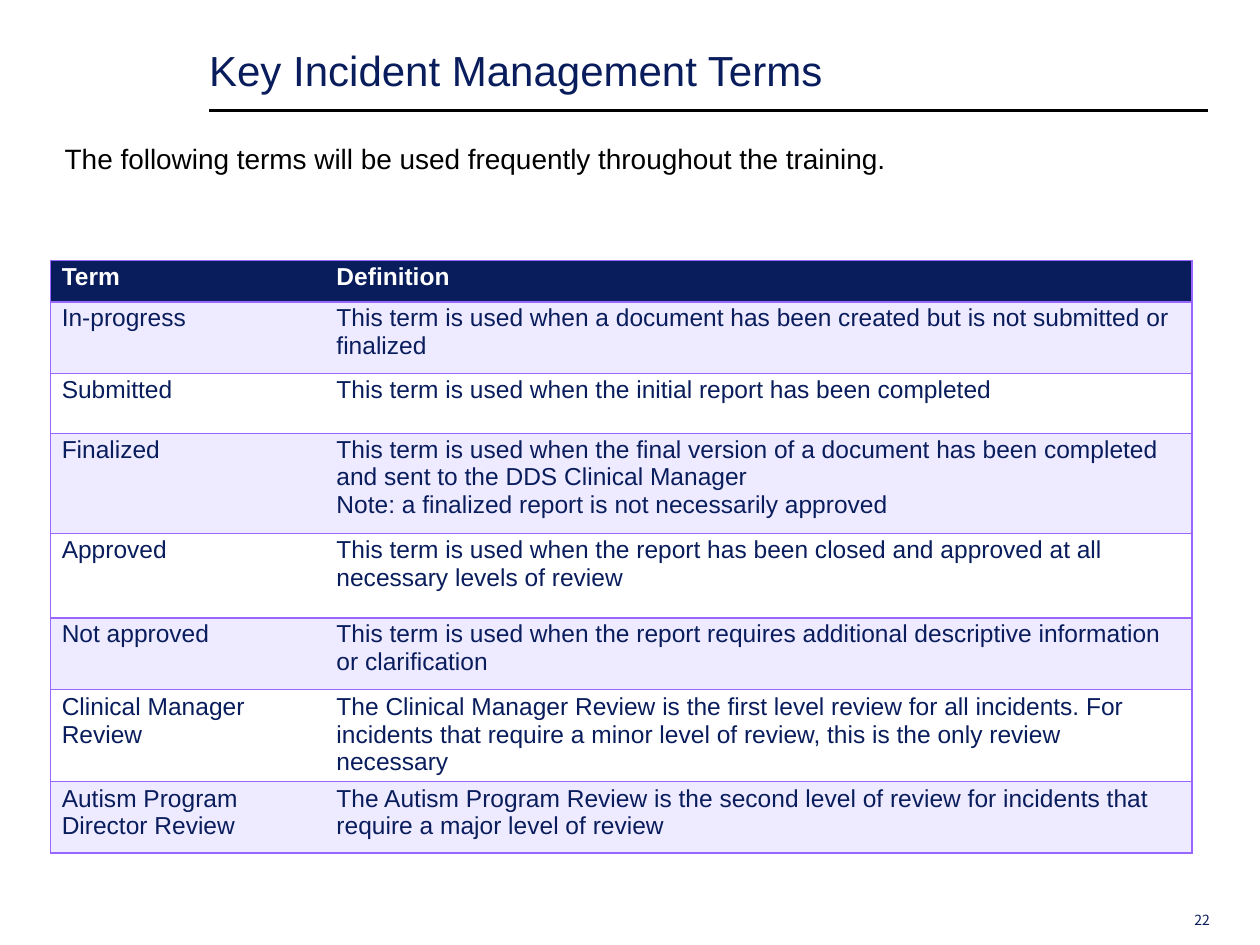
import pptx
import pptx.dml.color
import pptx.enum.shapes
import pptx.enum.text
import pptx.oxml.ns
import pptx.util
from lxml import etree

Pt = pptx.util.Pt

COLORS = {
    "navy": "091D5D",
    "lavender": "EEEAFF",
    "purple": "9966FF",
    "white": "FFFFFF",
    "black": "000000",
}

# Row height, top margin, right margin of the definition, term, definition
TERMS = [
    (23.5, 1.5, 0, "Term", "Definition"),
    (41, 1.5, 0, "In-progress",
     "This term is used when a document has been created but is not submitted or\nfinalized"),
    (34.2, 1.5, 0, "Submitted",
     "This term is used when the initial report has been completed"),
    (57.3, 1.5, 0, "Finalized",
     "This term is used when the final version of a document has been completed\n"
     "and sent to the DDS Clinical Manager\n"
     "Note: a finalized report is not necessarily approved"),
    (48.2, 1.5, 0, "Approved",
     "This term is used when the report has been closed and approved at "
     "all necessary levels of review"),
    (41, 1.5, 0, "Not approved",
     "This term is used when the report requires additional descriptive information\n"
     "or clarification"),
    (52.4, 2, 24, "Clinical Manager Review",
     "The Clinical Manager Review is the first level review for all incidents. "
     "For incidents that require a minor level of review, this is the only review necessary"),
    (40.8, 2, 0, "Autism Program\nDirector Review",
     "The Autism Program Review is the second level of review for incidents that\n"
     "require a major level of review"),
]


def rgb(name):
    return pptx.dml.color.RGBColor.from_string(COLORS[name])


class SlideBuilder:
    font = "Arial"

    def __init__(self, slide):
        self.slide = slide

    def set_text(self, frame, text, size, color, bold=False, font=None):
        frame.text = text
        frame.word_wrap = True
        for paragraph in frame.paragraphs:
            paragraph.alignment = pptx.enum.text.PP_ALIGN.LEFT
            for run in paragraph.runs:
                run.font.name = font or self.font
                run.font.size = Pt(size)
                run.font.bold = bold
                run.font.color.rgb = rgb(color)

    def fill_box(self, shape, text, size, color, font=None):
        frame = shape.text_frame
        frame.margin_left = frame.margin_right = 0
        frame.margin_top = frame.margin_bottom = 0
        frame.vertical_anchor = pptx.enum.text.MSO_ANCHOR.TOP
        frame.auto_size = pptx.enum.text.MSO_AUTO_SIZE.NONE
        self.set_text(frame, text, size, color, font=font)

    def title(self, text, left, top, width, height):
        title = self.slide.shapes.title
        title.left, title.top = Pt(left), Pt(top)
        title.width, title.height = Pt(width), Pt(height)
        self.fill_box(title, text, 24, "navy")

    def text(self, text, left, top, width, height, size, color, font=None):
        box = self.slide.shapes.add_textbox(Pt(left), Pt(top), Pt(width), Pt(height))
        self.fill_box(box, text, size, color, font)

    def rule(self, left, right, y):
        rule = self.slide.shapes.add_connector(
            pptx.enum.shapes.MSO_CONNECTOR.STRAIGHT, Pt(left), Pt(y), Pt(right), Pt(y))
        rule.line.color.rgb = rgb("black")
        rule.line.width = Pt(2)
        properties = rule._element.spPr
        etree.SubElement(properties, pptx.oxml.ns.qn("a:effectLst"))

    def borders(self, cell, hidden_side):
        qn = pptx.oxml.ns.qn
        properties = cell._tc.get_or_add_tcPr()
        for side in "LRTB":
            line = etree.SubElement(properties, qn(f"a:ln{side}"), w=str(Pt(1)))
            if side == hidden_side:
                etree.SubElement(line, qn("a:noFill"))
            else:
                fill = etree.SubElement(line, qn("a:solidFill"))
                etree.SubElement(fill, qn("a:srgbClr"), val=COLORS["purple"])

    def table(self, rows, left, top, column_widths, indents):
        heights = [row[0] for row in rows]
        table = self.slide.shapes.add_table(
            len(rows), len(column_widths), Pt(left), Pt(top),
            Pt(sum(column_widths)), Pt(sum(heights))).table
        table.horz_banding = False
        for column, width in zip(table.columns, column_widths):
            column.width = Pt(width)
        for index, (height, margin_top, margin_right, *texts) in enumerate(rows):
            table.rows[index].height = Pt(height)
            header = index == 0
            background = "navy" if header else "lavender" if index % 2 else "white"
            for column, text in enumerate(texts):
                cell = table.cell(index, column)
                cell.margin_left = Pt(indents[column])
                cell.margin_right = Pt(margin_right if column else 0)
                cell.margin_top, cell.margin_bottom = Pt(margin_top), 0
                self.borders(cell, "L" if column else "R")
                cell.fill.solid()
                cell.fill.fore_color.rgb = rgb(background)
                self.set_text(cell.text_frame, text, 14,
                              "white" if header else "navy", bold=header)


def main():
    deck = pptx.Presentation()
    deck.slide_width, deck.slide_height = Pt(720), Pt(540)
    builder = SlideBuilder(deck.slides.add_slide(deck.slide_layouts[5]))

    # Heading
    builder.rule(119.5, 690.5, 63.2)
    builder.title("Key Incident Management Terms", 119.5, 25.5, 370, 30)
    builder.text("The following terms will be used frequently throughout the training.",
                 37, 81, 480, 20, 16, "black")

    # Glossary
    builder.table(TERMS, 29, 149, (136.8, 515.5), (6.3, 26.5))

    # Page number
    builder.text("22", 682.5, 521, 12, 10, 8, "navy", "Noto Sans CJK JP")

    deck.save("out.pptx")


if __name__ == "__main__":
    main()
